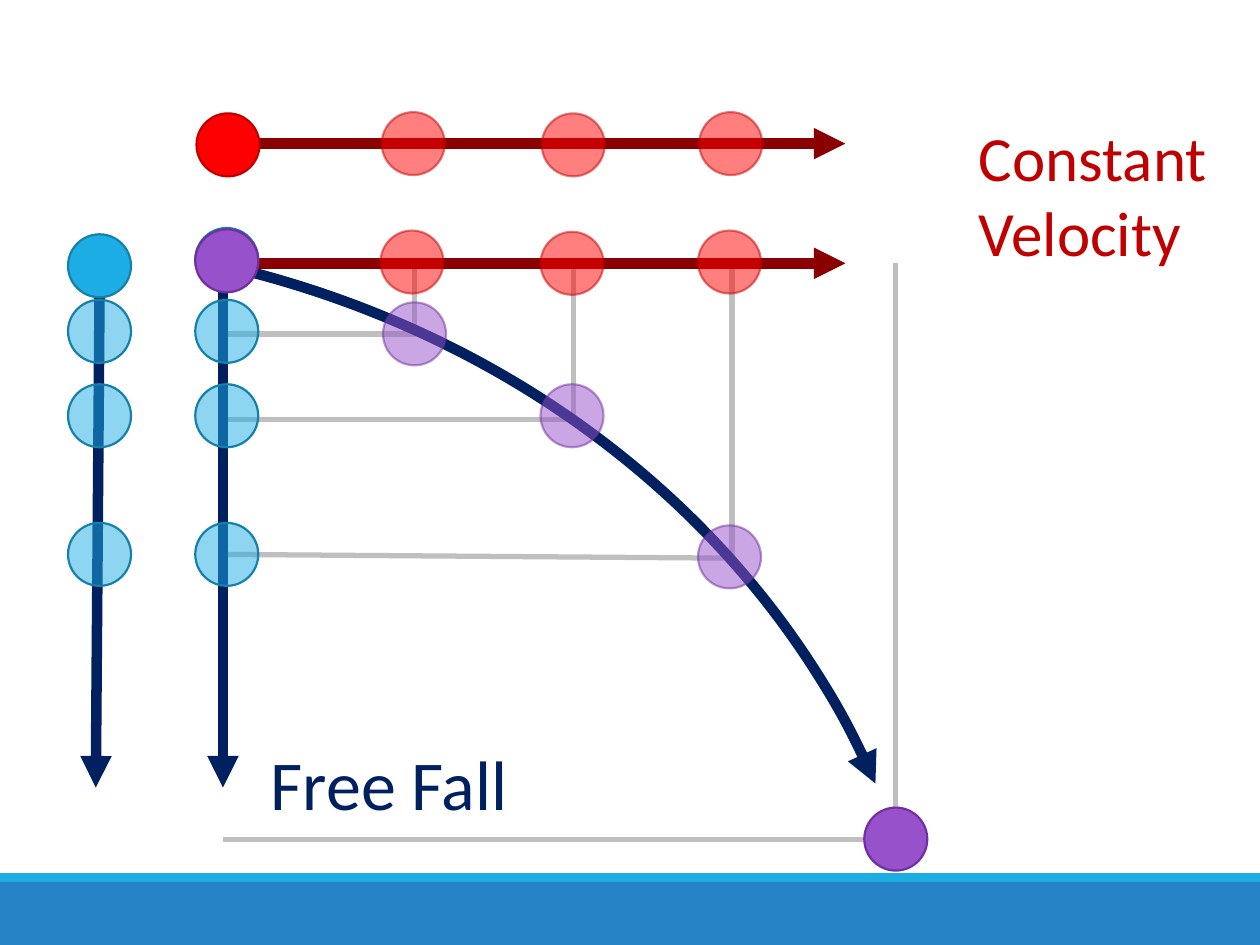
from pptx import Presentation
from pptx.dml.color import RGBColor
from pptx.enum.shapes import MSO_CONNECTOR, MSO_SHAPE
from pptx.enum.text import MSO_AUTO_SIZE
from pptx.oxml.ns import qn
from pptx.oxml.xmlchemy import OxmlElement
from pptx.util import Inches, Pt

RECT, OVAL, ARC = MSO_SHAPE.RECTANGLE, MSO_SHAPE.OVAL, MSO_SHAPE.ARC
STRAIGHT = MSO_CONNECTOR.STRAIGHT
GROW = MSO_AUTO_SIZE.SHAPE_TO_FIT_TEXT

GRAY, NAVY, MAROON, CRIMSON = "BFBFBF", "002060", "8A0000", "C00000"
# Ball colours: fill, outline
RED = ("FF0000", CRIMSON)
BLUE = ("1CADE4", "1580A9")
PURPLE = ("9751CB", "7030A0")


def color(hex_text):
    return RGBColor.from_string(hex_text)


def add_child(parent, tag, **attrs):
    child = OxmlElement(tag)
    for name, value in attrs.items():
        child.set(name, str(value))
    parent.append(child)


def write(tf, text, size=36, font="Calibri", fill="000000"):
    for i, line in enumerate(text.split("\n")):
        p = tf.paragraphs[0] if i == 0 else tf.add_paragraph()
        r = p.add_run()
        r.text = line
        r.font.size, r.font.name = Pt(size), font
        r.font.color.rgb = color(fill)


class MotionSlide:
    ball_size = 0.5
    ball_line = 1.25
    guide_width = 3
    arrow_width = 6

    def __init__(self, prs):
        self.shapes = prs.slides.add_slide(prs.slide_layouts[6]).shapes

    def shape(self, kind, left, top, width, height):
        sp = self.shapes.add_shape(kind, *map(Inches, (left, top, width, height)))
        sp.shadow.inherit = False
        return sp

    def stroke(self, sp, line, width, arrow=False):
        sp.line.color.rgb = color(line)
        sp.line.width = Pt(width)
        if arrow:
            add_child(sp.line._get_or_add_ln(), "a:tailEnd", type="triangle")

    def band(self, top, height, fill):
        sp = self.shape(RECT, 0, top, 10, height)
        sp.fill.solid()
        sp.fill.fore_color.rgb = color(fill)
        sp.line.fill.background()

    def line(self, x1, y1, x2, y2, line=GRAY, arrow=False):
        c = self.shapes.add_connector(STRAIGHT, *map(Inches, (x1, y1, x2, y2)))
        self.stroke(c, line, self.arrow_width if arrow else self.guide_width, arrow)
        add_child(c._element.spPr, "a:effectLst")

    def ball(self, left, top, colors, ghost=False):
        sp = self.shape(OVAL, left, top, self.ball_size, self.ball_size)
        sp.fill.solid()
        sp.fill.fore_color.rgb = color(colors[0])
        self.stroke(sp, colors[1], self.ball_line)
        if ghost:
            tints = list(sp._element.spPr.iter(qn("a:srgbClr")))
            # Blue ghosts keep a solid outline
            for tint in tints[:1] if colors == BLUE else tints:
                add_child(tint, "a:alpha", val=50000)

    def ghosts(self, places, colors):
        for left, top in places:
            self.ball(left, top, colors, ghost=True)

    def arc(self, left, top, width, height, start, end, line):
        sp = self.shape(ARC, left, top, width, height)
        # One adjustment unit is 100000 sixty-thousandths of a degree
        for i, degrees in enumerate((start, end)):
            sp.adjustments[i] = degrees * 0.6
        sp.fill.background()
        self.stroke(sp, line, self.arrow_width, arrow=True)

    def label(self, left, top, width, height, text, **fmt):
        tb = self.shapes.add_textbox(*map(Inches, (left, top, width, height)))
        tf = tb.text_frame
        tf.word_wrap = False
        tf.auto_size = GROW
        write(tf, text, **fmt)


def main():
    prs = Presentation()
    prs.slide_width, prs.slide_height = Inches(10), Inches(7.5)
    s = MotionSlide(prs)
    fall_tops = (2.38, 3.05, 4.15)

    # Ground
    s.band(7, 0.5, "2683C6")
    s.band(6.93, 0.07, "1CADE4")

    # Guides from both axes to the path
    for x, top, bottom in ((3.29, 2.11, 2.65), (4.55, 2.11, 3.33),
                           (5.81, 2.09, 4.43), (7.11, 2.09, 6.66)):
        s.line(x, top, x, bottom)
    for x1, y1, x2, y2 in ((1.8, 2.65, 3.3, 2.65), (1.77, 3.33, 4.55, 3.33),
                           (1.77, 4.4, 5.81, 4.43), (1.77, 6.66, 7.11, 6.66)):
        s.line(x1, y1, x2, y2)

    # Components of the projectile's motion
    s.line(2.02, 2.09, 6.71, 2.09, MAROON, arrow=True)
    s.ghosts(((3.02, 1.83), (4.29, 1.84), (5.54, 1.83)), RED)
    s.line(1.77, 2.21, 1.77, 6.25, NAVY, arrow=True)
    s.ball(1.55, 1.81, BLUE)
    s.ghosts([(1.55, top) for top in fall_tops], BLUE)

    # Projectile path
    s.arc(-7.72, 1.89, 15.19, 13.62, 284.6, 340.66, NAVY)
    s.ghosts(((3.04, 2.4), (4.29, 3.05), (5.54, 4.17)), PURPLE)
    s.ball(6.86, 6.41, PURPLE)
    s.ball(1.55, 1.82, PURPLE)

    # Free fall alone
    s.line(0.79, 2.36, 0.76, 6.25, NAVY, arrow=True)
    s.ball(0.54, 1.86, BLUE)
    s.ghosts([(0.54, top) for top in fall_tops], BLUE)
    s.label(2.05, 5.83, 2.24, 0.77, "Free Fall", size=40, fill=NAVY)

    # Constant velocity alone
    s.label(7.67, 0.89, 2.2, 1.31, "Constant\nVelocity", fill=CRIMSON)
    s.line(2.03, 1.14, 6.71, 1.14, MAROON, arrow=True)
    s.ghosts(((3.03, 0.89), (4.3, 0.9), (5.55, 0.89)), RED)
    s.ball(1.56, 0.9, RED)

    prs.save("out.pptx")


if __name__ == "__main__":
    main()
